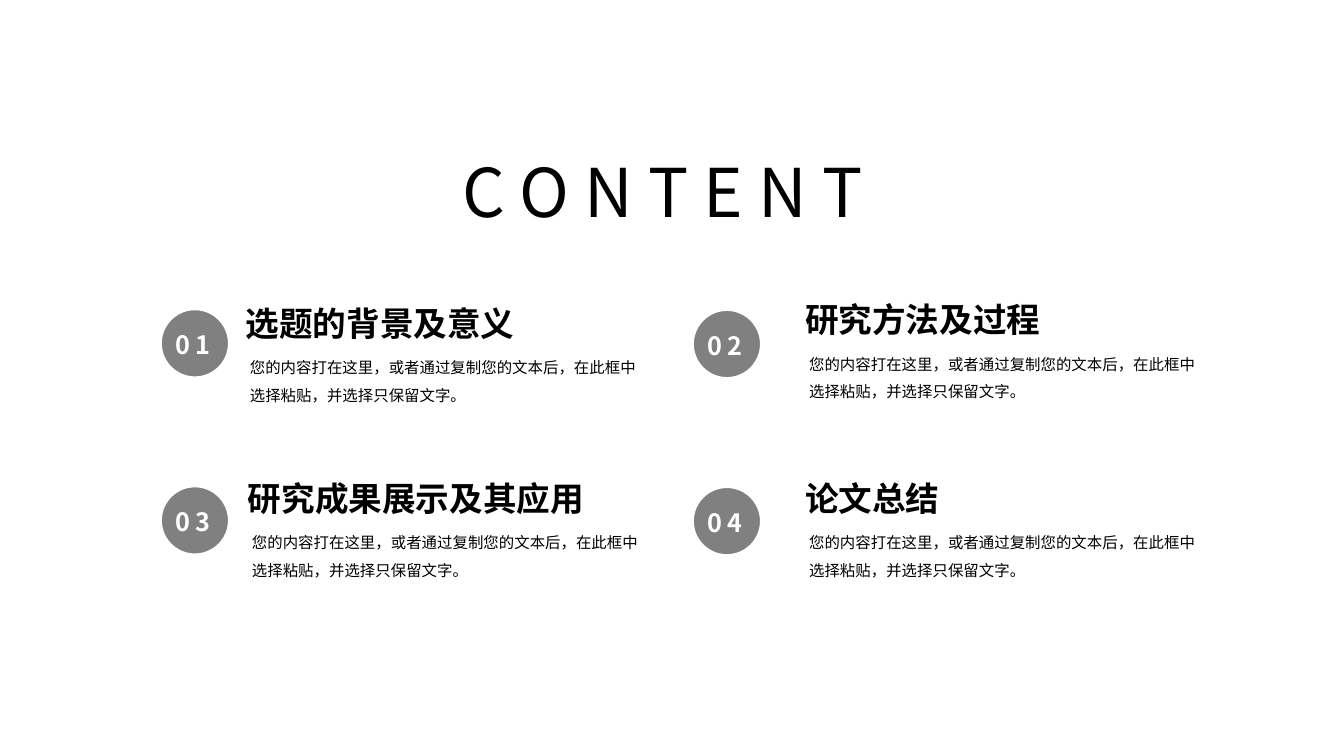
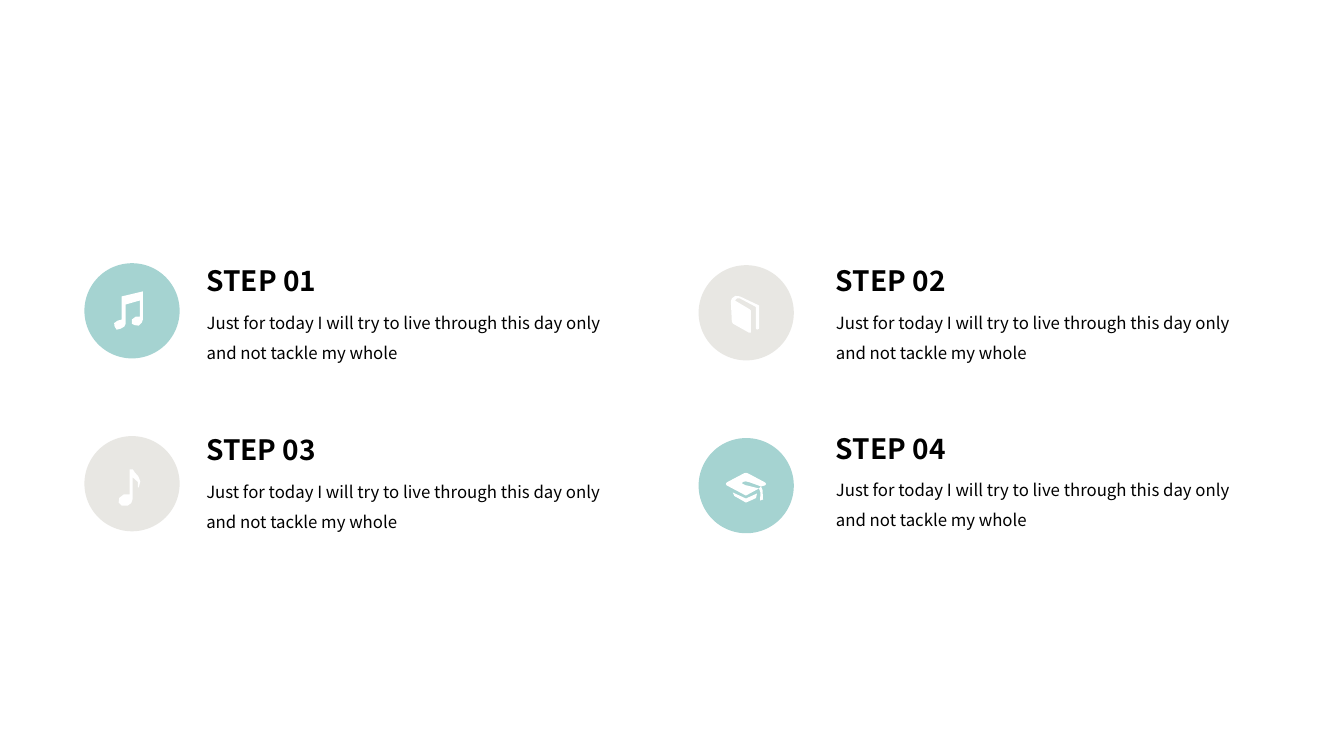
"""Build a contents slide and a four-step slide."""
from pptx import Presentation
from pptx.dml.color import RGBColor
from pptx.enum.shapes import MSO_SHAPE
from pptx.enum.text import MSO_ANCHOR, MSO_AUTO_SIZE, PP_ALIGN
from pptx.util import Pt
from lxml.etree import SubElement
from pptx.oxml.ns import qn

FONT = "Noto Sans CJK SC"
BLACK, WHITE, GRAY = "000000", "FFFFFF", "808080"
TEAL, SAND = "A5D3D1", "E8E7E3"


def paint(fill, color):
    fill.solid()
    fill.fore_color.rgb = RGBColor.from_string(color)


def write(shape, text, size, color=BLACK, bold=False, align=PP_ALIGN.LEFT, space=1.0):
    frame = shape.text_frame
    frame.text = text
    frame.word_wrap = True
    para = frame.paragraphs[0]
    para.alignment = align
    para.line_spacing = space
    run = para.runs[0]
    run.font.size = Pt(size)
    run.font.bold = bold
    paint(run.font.fill, color)
    run.font.name = FONT
    SubElement(run._r.get_or_add_rPr(), qn("a:ea"), typeface=FONT)


deck = Presentation()
deck.slide_width, deck.slide_height = Pt(960), Pt(540)

slide = deck.slides.add_slide(deck.slide_layouts[5])
title = slide.shapes.title
title.left, title.top, title.width, title.height = Pt(289.5), Pt(103.7), Pt(367), Pt(65.5)
write(title, "C O N T E N T", 48, align=PP_ALIGN.CENTER)
title.text_frame.vertical_anchor = MSO_ANCHOR.TOP
title.text_frame.auto_size = MSO_AUTO_SIZE.NONE

BODY = "您的内容打在这里，或者通过复制您的文本后，在此框中选择粘贴，并选择只保留文字。"
topics = [
    ("0 1", "选题的背景及意义", 114.5, 220.5, 168.5, 212.7),
    ("0 2", "研究方法及过程", 494.5, 221, 568, 210),
    ("0 3", "研究成果展示及其应用", 114.5, 347, 170, 337.5),
    ("0 4", "论文总结", 494.5, 347.5, 568, 337.5),
]
for mark, head, left, top, x, y in topics:
    disc = slide.shapes.add_shape(MSO_SHAPE.OVAL, Pt(left), Pt(top), Pt(49.5), Pt(49.5))
    disc.shadow.inherit = False
    paint(disc.fill, GRAY)
    paint(disc.line.fill, WHITE)
    disc.line.width = Pt(2.25)
    write(disc, mark, 18, WHITE, True, PP_ALIGN.CENTER)
    frame = disc.text_frame
    frame.word_wrap = False
    frame.vertical_anchor = MSO_ANCHOR.MIDDLE
    frame.margin_left = frame.margin_bottom = 0
    frame.margin_right, frame.margin_top = Pt(2.8), Pt(2)
    box = slide.shapes.add_textbox(Pt(x), Pt(y), Pt(265), Pt(36))
    write(box, head, 24, bold=True)
    box = slide.shapes.add_textbox(Pt(x + 2.9), Pt(y + 33.3), Pt(299), Pt(47.5))
    write(box, BODY, 11, space=1.5)

slide = deck.slides.add_slide(deck.slide_layouts[6])
notes = [[
    (74, 66), (74, 112), (66, 114), (59, 119), (60, 126), (64, 132), (72, 130),
    (79, 126), (82, 120), (82, 82), (110, 74), (110, 106), (102, 106), (94, 112),
    (94, 120), (100, 123), (108, 124), (114, 118), (116, 112), (116, 56),
]]
book = [[
    (120, 80), (82, 62), (73, 61), (66, 66), (64, 72), (66, 112), (68, 116),
    (100, 134), (104, 134), (104, 90), (102, 88), (72, 70), (76, 66), (82, 66),
    (112, 82), (114, 84), (114, 126), (116, 128), (120, 126),
]]
note = [[
    (96, 66), (90, 66), (90, 116), (78, 116), (69, 123), (68, 132), (74, 138),
    (86, 138), (93, 133), (96, 124), (96, 82), (106, 91), (106, 102), (108, 102),
    (111, 90), (107, 80), (100, 72),
]]
cap = [
    [(68, 108), (71, 115), (80, 120), (94, 128), (108, 122), (114, 119), (116, 110), (94, 120)],
    [(132, 88), (98, 70), (94, 69), (90, 70), (56, 88), (54, 91), (56, 94), (90, 112),
     (94, 114), (98, 112), (120, 100), (96, 94), (94, 94), (86, 90), (88, 87), (94, 86),
     (102, 88), (124, 96), (132, 94), (134, 91)],
    [(122, 124), (128, 122), (127, 103), (124, 96), (120, 100), (123, 108)],
]
STEP = "Just for today I will try to live through this day only and not tackle my whole"
steps = [
    ("STEP 01", notes, TEAL, 60.3, 188, 140.5, 185),
    ("STEP 02", book, SAND, 499, 189.4, 590, 185),
    ("STEP 03", note, SAND, 60.3, 311.5, 140.3, 305.5),
    ("STEP 04", cap, TEAL, 499, 312.9, 590, 304.5),
]
for head, icon, color, left, top, x, y in steps:
    disc = slide.shapes.add_shape(MSO_SHAPE.OVAL, Pt(left), Pt(top), Pt(68), Pt(68))
    pen = slide.shapes.build_freeform(*icon[0][0], scale=Pt(0.36))
    for part in icon:
        pen.move_to(*part[0])
        pen.add_line_segments(part[1:], close=True)
    sign = pen.convert_to_shape(Pt(left), Pt(top))
    for shape, tone in ((disc, color), (sign, WHITE)):
        shape.shadow.inherit = False
        paint(shape.fill, tone)
        shape.line.fill.background()
    box = slide.shapes.add_textbox(Pt(x), Pt(y), Pt(221), Pt(31.5))
    write(box, head, 20, bold=True)
    box = slide.shapes.add_textbox(Pt(x), Pt(y + 27.5), Pt(319), Pt(51))
    write(box, STEP, 12, space=1.5)

deck.save("out.pptx")
